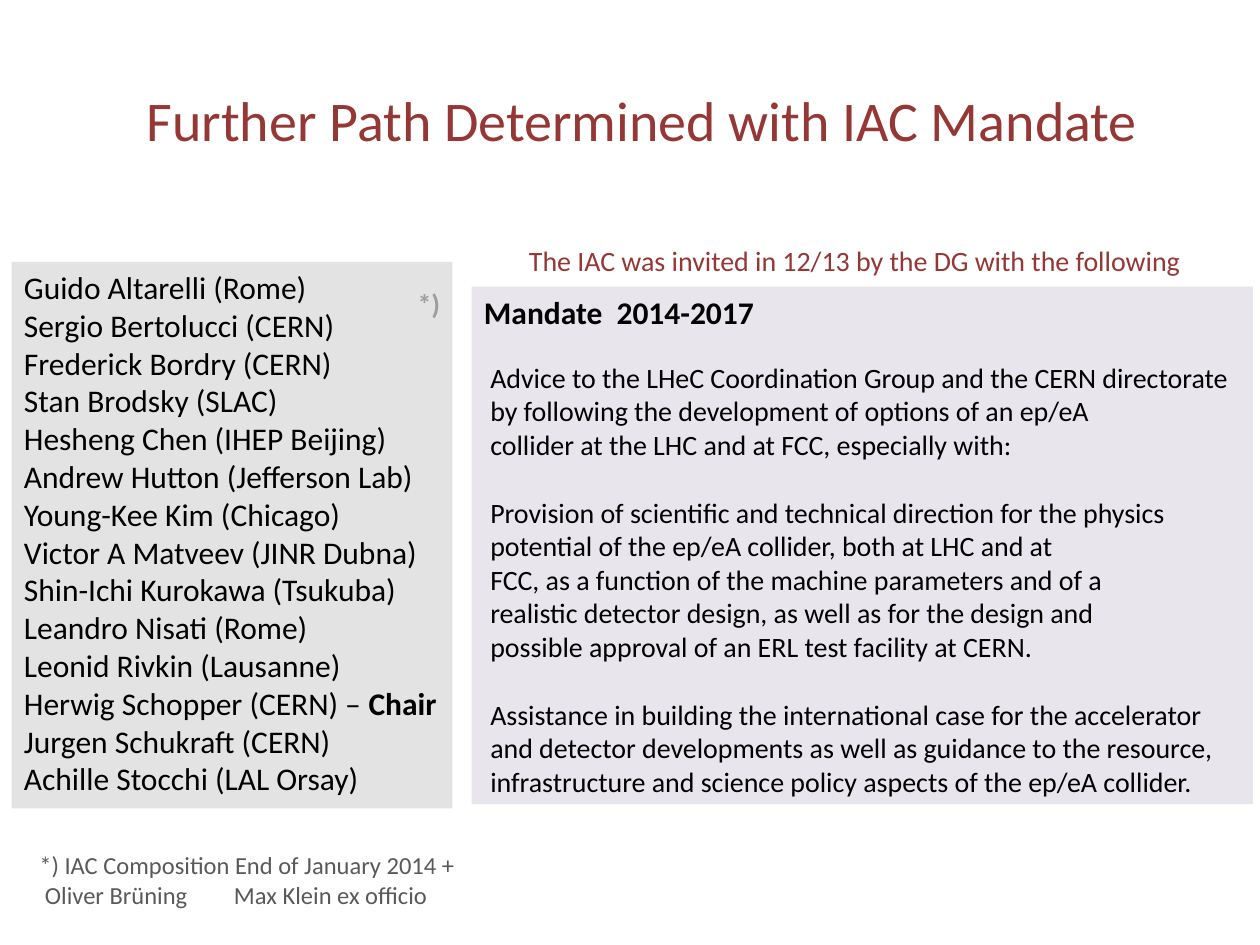
"""Build the slide on the IAC members and their mandate."""
from dataclasses import dataclass
from typing import Optional

from lxml import etree
from pptx import Presentation
from pptx import util as u
from pptx.dml.color import RGBColor
from pptx.enum import shapes, text
from pptx.oxml.ns import qn
from pptx.slide import Slide


@dataclass(frozen=True)
class Theme:
    font: str = "Calibri"
    ink: str = "000000"
    accent: str = "953735"
    muted: str = "595959"
    mandate_fill: str = "604A7B"
    member_fill: str = "D9D9D9"
    title: float = 32
    heading: float = 18
    body: float = 16
    small: float = 14


THEME = Theme()


@dataclass(frozen=True)
class Span:
    words: str
    size: float = THEME.body
    bold: bool = False
    color: str = THEME.ink


@dataclass(frozen=True)
class Line:
    spans: tuple[Span, ...]
    before: float = 0
    indent: float = 0
    tab: Optional[float] = None


@dataclass(frozen=True)
class Block:
    left: float
    top: float
    width: float
    height: float
    lines: tuple[Line, ...]
    fill: Optional[str] = None
    opacity: int = 100
    align: text.PP_ALIGN = text.PP_ALIGN.LEFT
    anchor: text.MSO_ANCHOR = text.MSO_ANCHOR.TOP


def apply(target: object, values: dict[str, object]) -> None:
    """Set every named attribute on the target."""
    for name, value in values.items():
        setattr(target, name, value)


def line(words: str, **style: object) -> Line:
    """Make a line of one span."""
    return Line((Span(words, **style),))


def passage(rows: tuple[str, ...], before: float) -> list[Line]:
    """Make indented mandate lines with a gap above the first."""
    return [Line((Span(row),), 0 if index else before, 3.6) for index, row in enumerate(rows)]


def draw_line(para: object, item: Line, align: text.PP_ALIGN) -> None:
    """Write one line into a paragraph."""
    apply(para, {"alignment": align, "space_before": u.Pt(item.before)})
    properties = para._p.get_or_add_pPr()
    properties.set("marL", str(u.Pt(item.indent)))
    properties.set("indent", "0")
    if item.tab:
        stops = etree.SubElement(properties, qn("a:tabLst"))
        etree.SubElement(stops, qn("a:tab"), pos=str(u.Pt(item.tab)), algn="l")
    for part in item.spans:
        span = para.add_run()
        span.text = part.words
        apply(span.font, {"name": THEME.font, "size": u.Pt(part.size), "bold": part.bold})
        span.font.color.rgb = RGBColor.from_string(part.color)


def draw_block(page: Slide, block: Block) -> None:
    """Draw a text box, or a filled panel when the block has a fill."""
    place = [u.Pt(value) for value in (block.left, block.top, block.width, block.height)]
    if block.fill:
        box = page.shapes.add_shape(shapes.MSO_SHAPE.RECTANGLE, *place)
        box.shadow.inherit = False
        box.line.fill.background()
        box.fill.solid()
        box.fill.fore_color.rgb = RGBColor.from_string(block.fill)
        color = box._element.spPr.find(f".//{qn('a:srgbClr')}")
        etree.SubElement(color, qn("a:alpha"), val=str(block.opacity * 1000))
    else:
        box = page.shapes.add_textbox(*place)
    frame = box.text_frame
    apply(frame, {"word_wrap": True, "margin_right": 0, "vertical_anchor": block.anchor})
    for index, item in enumerate(block.lines):
        para = frame.add_paragraph() if index else frame.paragraphs[0]
        draw_line(para, item, block.align)


MEMBERS = (
    "Guido Altarelli (Rome)", "Sergio Bertolucci (CERN)", "Frederick Bordry (CERN)",
    "Stan Brodsky (SLAC)", "Hesheng Chen (IHEP Beijing)", "Andrew Hutton (Jefferson Lab)",
    "Young-Kee Kim (Chicago)", "Victor A Matveev (JINR Dubna)", "Shin-Ichi Kurokawa (Tsukuba)",
    "Leandro Nisati (Rome)", "Leonid Rivkin (Lausanne)", "Herwig Schopper (CERN) – ",
    "Jurgen Schukraft (CERN)", "Achille Stocchi (LAL Orsay)",
)
CHAIR = "Herwig Schopper (CERN) – "

ADVICE = (
    "Advice to the LHeC Coordination Group and the CERN directorate",
    "by following the development of options of an ep/eA",
    "collider at the LHC and at FCC, especially with:",
)
PROVISION = (
    "Provision of scientific and technical direction for the physics",
    "potential of the ep/eA collider, both at LHC and at",
    "FCC, as a function of the machine parameters and of a",
    "realistic detector design, as well as for the design and",
    "possible approval of an ERL test facility at CERN.",
)
ASSISTANCE = (
    "Assistance in building the international case for the accelerator",
    "and detector developments as well as guidance to the resource,",
    "infrastructure and science policy aspects of the ep/eA collider.",
)


def member_line(name: str) -> Line:
    """Make a member line, marking the chair in bold."""
    spans = [Span(name, THEME.heading)]
    if name == CHAIR:
        spans.append(Span("Chair", THEME.heading, True))
    return Line(tuple(spans))


def main() -> None:
    """Build and save the deck."""
    deck = Presentation()
    apply(deck, {"slide_width": u.Pt(720), "slide_height": u.Pt(540)})
    page = deck.slides.add_slide(deck.slide_layouts[6])
    mandate = (
        line("Mandate  2014-2017", size=THEME.heading, bold=True),
        *passage(ADVICE, 17), *passage(PROVISION, 19.5), *passage(ASSISTANCE, 19.5),
    )
    footnote = (
        line("*) IAC Composition End of January 2014 +", size=THEME.small, color=THEME.muted),
        Line((Span("Oliver Brüning\tMax Klein ex officio", THEME.small, color=THEME.muted),),
             indent=3.2, tab=94.3),
    )
    blocks = (
        Block(36, 34.5, 655.2, 67.7,
              (line("Further Path Determined with IAC Mandate", size=THEME.title,
                    color=THEME.accent),),
              align=text.PP_ALIGN.CENTER, anchor=text.MSO_ANCHOR.MIDDLE),
        Block(269.5, 163.8, 446.5, 295.7, mandate, THEME.mandate_fill, 14),
        Block(295.2, 135.6, 388.8, 26.6,
              (line("The IAC was invited in 12/13 by the DG with the following",
                    color=THEME.accent),)),
        Block(231.5, 160, 27, 26.6, (line("*)", bold=True),)),
        Block(15.4, 482.4, 254, 41.2, footnote),
        Block(6.6, 149.6, 252, 312.4, tuple(map(member_line, MEMBERS)),
              THEME.member_fill, 73),
    )
    for block in blocks:
        draw_block(page, block)
    deck.save("out.pptx")


if __name__ == "__main__":
    main()
